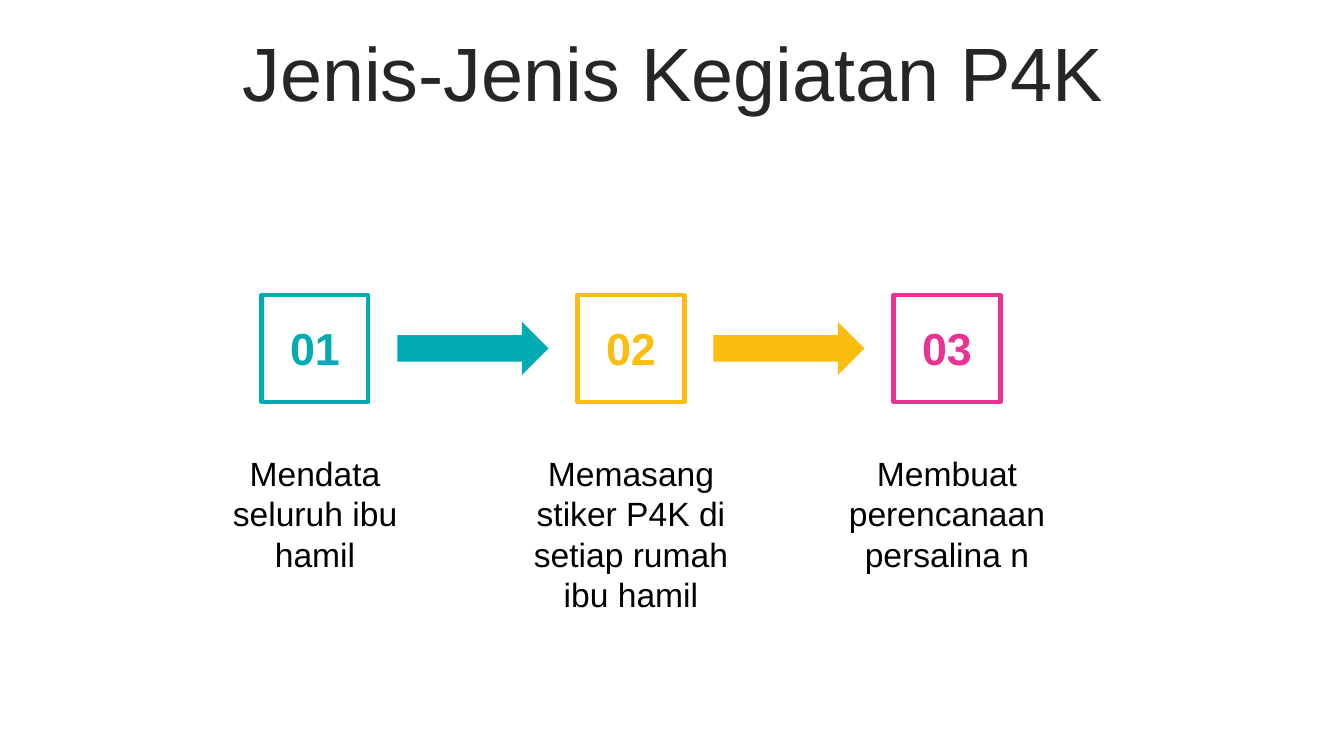
"""Build the slide listing the three steps of the P4K activities."""
import pptx
import pptx.dml.color
import pptx.enum.shapes
import pptx.enum.text
import pptx.util

RGBColor = pptx.dml.color.RGBColor
MSO_SHAPE = pptx.enum.shapes.MSO_SHAPE
MSO_ANCHOR = pptx.enum.text.MSO_ANCHOR

TEAL = RGBColor(0x00, 0xAC, 0xB2)
YELLOW = RGBColor(0xFC, 0xBE, 0x0E)
PINK = RGBColor(0xEA, 0x32, 0x93)
DARK = RGBColor(0x26, 0x26, 0x26)
BLACK = RGBColor(0x00, 0x00, 0x00)

TITLE = "Jenis-Jenis Kegiatan P4K"
STEPS = [
    ("01", "Mendata seluruh ibu hamil", TEAL, 132),
    ("02", "Memasang stiker P4K di setiap rumah ibu hamil", YELLOW, 173),
    ("03", "Membuat perencanaan persalina n", PINK, 132),
]

EMU_PER_PX = 914400 / 100.8
FIRST_CENTER, PITCH = 315, 316
BOX_TOP, BOX = 295, 107
ARROW_GAP, ARROW_W, ARROW_H = 29, 151, 53
NUMBER_W, NUMBER_H = 83, 65
CAPTION_TOP, CAPTION_W = 448, 245


def px(*lengths):
    return [pptx.util.Emu(round(n * EMU_PER_PX)) for n in lengths]


def add_text(s, text, rect, size, color, bold=False, anchor=MSO_ANCHOR.TOP):
    tf = s.shapes.add_textbox(*px(*rect)).text_frame
    tf.word_wrap = True
    tf.vertical_anchor = anchor
    p = tf.paragraphs[0]
    p.text = text
    p.alignment = pptx.enum.text.PP_ALIGN.CENTER
    p.font.name = "Arial"
    p.font.size = pptx.util.Pt(size)
    p.font.bold = bold
    p.font.color.rgb = color
    return p


def add_box(s, rect, color):
    sp = s.shapes.add_shape(MSO_SHAPE.RECTANGLE, *px(*rect))
    sp.shadow.inherit = False
    sp.fill.background()
    sp.line.color.rgb = color
    sp.line.width = pptx.util.Pt(3)


def add_arrow(s, rect, color):
    sp = s.shapes.add_shape(MSO_SHAPE.RIGHT_ARROW, *px(*rect))
    sp.shadow.inherit = False
    sp.fill.solid()
    sp.fill.fore_color.rgb = color
    sp.line.fill.background()


def main():
    prs = pptx.Presentation()
    prs.slide_width, prs.slide_height = px(1344, 756)
    s = prs.slides.add_slide(prs.slide_layouts[6])

    p = add_text(s, TITLE, (35, 37, 1276, 80), 54, DARK, anchor=MSO_ANCHOR.MIDDLE)
    p.line_spacing = 0.9
    p.space_before = pptx.util.Pt(10)

    middle = BOX_TOP + BOX / 2
    for i, (number, caption, color, caption_h) in enumerate(STEPS):
        center = FIRST_CENTER + i * PITCH
        add_box(s, (center - BOX / 2, BOX_TOP, BOX, BOX), color)
        if i < len(STEPS) - 1:
            arrow_left = center + BOX / 2 + ARROW_GAP
            add_arrow(s, (arrow_left, middle - ARROW_H / 2, ARROW_W, ARROW_H), color)
        add_text(s, number, (center - NUMBER_W / 2, middle - NUMBER_H / 2, NUMBER_W, NUMBER_H),
                 32, color, bold=True)
        add_text(s, caption, (center - CAPTION_W / 2, CAPTION_TOP, CAPTION_W, caption_h),
                 24, BLACK)

    prs.save("out.pptx")


if __name__ == "__main__":
    main()
